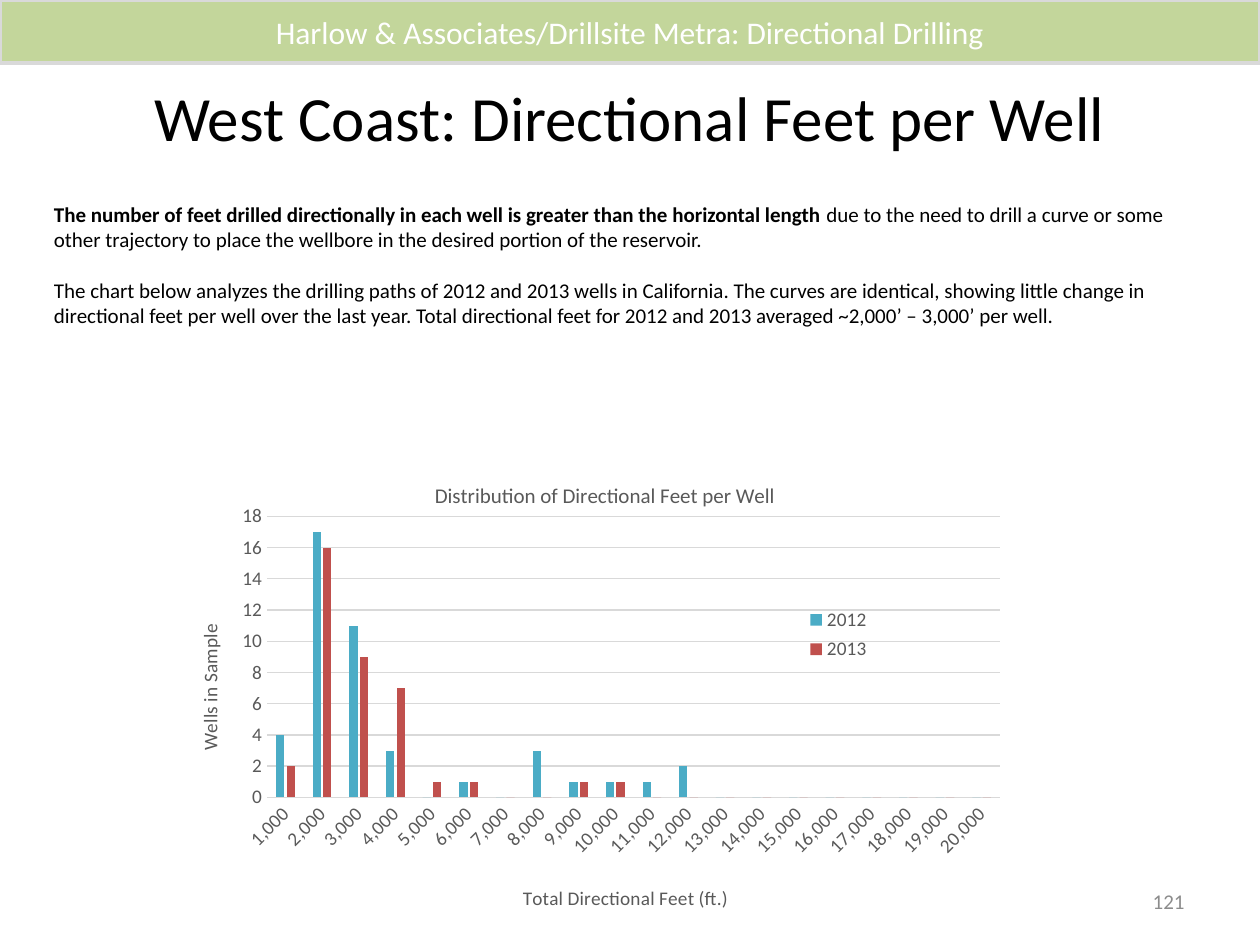
from lxml import etree
from pptx import Presentation
from pptx.chart.data import CategoryChartData
from pptx.dml.color import RGBColor
from pptx.enum.chart import XL_CHART_TYPE, XL_LEGEND_POSITION, XL_TICK_MARK
from pptx.enum.shapes import MSO_SHAPE
from pptx.enum.text import MSO_ANCHOR, PP_ALIGN
from pptx.oxml.ns import qn
from pptx.util import Inches, Pt

COLUMN = XL_CHART_TYPE.COLUMN_CLUSTERED
BOTTOM = XL_LEGEND_POSITION.BOTTOM
NO_TICK = XL_TICK_MARK.NONE
RECT = MSO_SHAPE.RECTANGLE
TOP, MIDDLE = MSO_ANCHOR.TOP, MSO_ANCHOR.MIDDLE
LEFT, CENTER, RIGHT = PP_ALIGN.LEFT, PP_ALIGN.CENTER, PP_ALIGN.RIGHT

BLACK = RGBColor(0x00, 0x00, 0x00)
WHITE = RGBColor(0xFF, 0xFF, 0xFF)
GREEN = RGBColor(0xC3, 0xD6, 0x9B)
RULE = RGBColor(0xD9, 0xD9, 0xD9)
GRAY = RGBColor(0x59, 0x59, 0x59)
PALE = RGBColor(0x8C, 0x8C, 0x8C)
TEAL = RGBColor(0x4B, 0xAC, 0xC6)
RED = RGBColor(0xC0, 0x50, 0x4D)

WIDE, HIGH = 10, 7.5
FONT = "Calibri"

BODY = [
    [("The number of feet drilled directionally in each well is greater than "
      "the horizontal length ", True),
     ("due to the need to drill a curve or some other trajectory to place the "
      "wellbore in the desired portion of the reservoir.", False)],
    [("The chart below analyzes the drilling paths of 2012 and 2013 wells in "
      "California. The curves are identical, showing little change in "
      "directional feet per well over the last year. Total directional feet "
      "for 2012 and 2013 averaged ~2,000’ – 3,000’ per well.", False)],
]
FEET = range(1000, 21000, 1000)
WELLS = {
    "2012": (TEAL, [4, 17, 11, 3, 0, 1, 0, 3, 1, 1, 1, 2]),
    "2013": (RED, [2, 16, 9, 7, 1, 1, 0, 0, 1, 1]),
}


def box(x, y, w, h):
    """Turn shares of the slide into lengths."""
    return (Inches(x * WIDE), Inches(y * HIGH),
            Inches(w * WIDE), Inches(h * HIGH))


def style(font, size, color, bold=False):
    form = {"name": FONT, "size": Pt(size), "bold": bold}
    for key, value in form.items():
        setattr(font, key, value)
    font.color.rgb = color


def write(shape, paras, size, color, align=LEFT, anchor=MIDDLE, gap=0):
    frame = shape.text_frame
    frame.word_wrap = True
    frame.vertical_anchor = anchor
    for i, runs in enumerate(paras):
        para = frame.add_paragraph() if i else frame.paragraphs[0]
        para.alignment = align
        if i:
            para.space_before = Pt(gap)
        for words, bold in runs:
            run = para.add_run()
            run.text = words
            style(run.font, size, color, bold)


def add_text(slide, area, paras, *args, **form):
    write(slide.shapes.add_textbox(*box(*area)), paras, *args, **form)


def add_band(slide, area, words):
    band = slide.shapes.add_shape(RECT, *box(*area))
    band.shadow.inherit = False
    band.fill.solid()
    band.fill.fore_color.rgb = GREEN
    band.line.color.rgb = RULE
    band.line.width = Pt(2)
    write(band, [[(words, False)]], 18, WHITE, CENTER)


def place(part, index, inner=False, **spots):
    """Fix a chart part at shares of the chart's size."""
    layout = part.find(qn("c:layout"))
    if layout is None:
        layout = etree.Element(qn("c:layout"))
        part.insert(index, layout)
    manual = etree.SubElement(layout, qn("c:manualLayout"))
    tags = {"layoutTarget": "inner"} if inner else {}
    tags.update(xMode="edge", yMode="edge", **spots)
    for tag, value in tags.items():
        etree.SubElement(manual, qn("c:" + tag)).set("val", str(value))


def set_title(title, words, size, x, y, turn=0):
    frame = title.text_frame
    frame.text = words
    style(frame.paragraphs[0].runs[0].font, size, GRAY)
    body = frame._txBody.bodyPr
    body.set("rot", str(turn * 60000))
    body.set("vert", "horz")
    place(title._element, 1, x=x, y=y)


def set_axis(axis, words, x, y, turn=0):
    axis.major_tick_mark = axis.minor_tick_mark = NO_TICK
    labels = axis.tick_labels
    labels.number_format = "#,##0"
    labels.number_format_is_linked = False
    style(labels.font, 11, GRAY)
    set_title(axis.axis_title, words, 11, x, y, turn)


def set_line(line):
    line.color.rgb = RULE
    line.width = Pt(0.75)


def add_chart(slide, area):
    data = CategoryChartData(number_format="General")
    data.categories = FEET
    data.categories.number_format = "#,##0"
    for name, (_, counts) in WELLS.items():
        data.add_series(name, counts + [0] * (len(FEET) - len(counts)))
    chart = slide.shapes.add_chart(COLUMN, *box(*area), data).chart
    style(chart.font, 10, BLACK)
    set_title(chart.chart_title, "Distribution of Directional Feet per Well",
              12, 0.3, 0.05)

    # Columns
    plot = chart.plots[0]
    plot.gap_width, plot.overlap = 219, -27
    plot.vary_by_categories = False
    for series, (color, _) in zip(plot.series, WELLS.values()):
        series.format.fill.solid()
        series.format.fill.fore_color.rgb = color
    place(chart._chartSpace.chart.plotArea, 0, inner=True,
          x=0.105, y=0.134, w=0.872, h=0.609)

    # Axes
    feet, wells = chart.category_axis, chart.value_axis
    set_axis(feet, "Total Directional Feet (ft.)", 0.405, 0.925)
    set_axis(wells, "Wells in Sample", 0.017, 0.36, -90)
    feet._element.find(qn("c:txPr")).bodyPr.set("rot", str(-45 * 60000))
    set_line(feet.format.line)
    wells.format.line.fill.background()
    set_line(wells.major_gridlines.format.line)
    wells.minimum_scale, wells.maximum_scale, wells.major_unit = 0, 18, 2

    # Legend
    chart.has_legend = True
    legend = chart.legend
    legend.position = BOTTOM
    legend.include_in_layout = False
    style(legend.font, 11, GRAY)
    place(legend._element, 1, x=0.74, y=0.32, w=0.09, h=0.14)


def main():
    deck = Presentation()
    deck.slide_width, deck.slide_height = Inches(WIDE), Inches(HIGH)
    slide = deck.slides.add_slide(deck.slide_layouts[6])

    # Heading and page number
    add_text(slide, (0.033, 0.04, 0.933, 0.167),
             [[("West Coast: Directional Feet per Well", False)]],
             36, BLACK, CENTER)
    add_text(slide, (0.717, 0.927, 0.233, 0.053), [[("121", False)]],
             12, PALE, RIGHT)

    # Body and top band
    add_text(slide, (0.033, 0.207, 0.917, 0.148), BODY, 12, BLACK,
             anchor=TOP, gap=14.5)
    add_band(slide, (0, 0, 1, 0.067),
             "Harlow & Associates/Drillsite Metra: Directional Drilling")

    # Chart
    add_chart(slide, (0.142, 0.481, 0.667, 0.489))
    deck.save("out.pptx")


if __name__ == "__main__":
    main()
